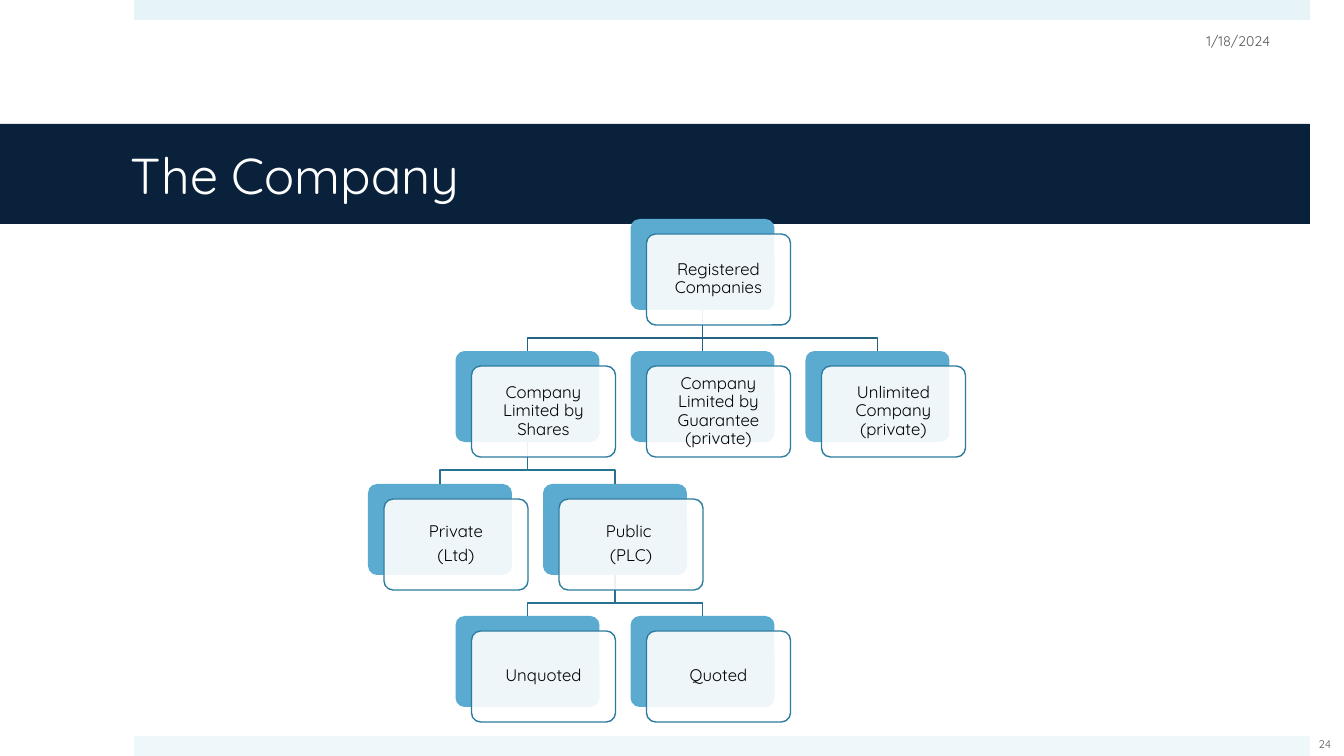
from pptx import Presentation
from pptx.dml.color import RGBColor
from pptx.enum.shapes import MSO_CONNECTOR, MSO_SHAPE
from pptx.enum.text import MSO_ANCHOR, PP_ALIGN
from pptx.oxml.ns import qn
from pptx.util import Pt
from lxml import etree

FONT = "Quicksand"
BANDS = [((134, 0, 1176, 20), "E6F4F8"), ((134, 736, 1176, 20), "EEF8FB")]
TITLE = "The Company"
FOOTERS = [
    ("1/18/2024", (967, 21, 313, 40), 10, PP_ALIGN.RIGHT),
    ("24", (1291, 724, 68, 40), 8, PP_ALIGN.CENTER),
]
COMPANIES = {
    "registered": ("Registered Companies", 3, 0, None),
    "shares": ("Company Limited by Shares", 1, 1, "registered"),
    "guarantee": ("Company Limited by Guarantee (private)", 3, 1, "registered"),
    "unlimited": ("Unlimited Company (private)", 5, 1, "registered"),
    "private": ("Private\n(Ltd)", 0, 2, "shares"),
    "public": ("Public \n(PLC)", 2, 2, "shares"),
    "unquoted": ("Unquoted", 1, 3, "public"),
    "quoted": ("Quoted", 3, 3, "public"),
}
LINE_COLORS = {1: "23637F", 2: "287190", 3: "287190"}
ROW_TOPS = [219, 351, 484, 616]
FIRST_LEFT, COLUMN_PAIR = 368, 175
BOX_WIDTH, BOX_HEIGHT = 144, 91
FRONT_RIGHT, FRONT_DOWN = 16, 15
ELBOW_DROP = 28


def px(value):
    return round(value * 914400 / 100.8)


def color(value):
    return RGBColor.from_string(value)


def add_box(kind, place, fill, line=None):
    shape = slide.shapes.add_shape(kind, *map(px, place))
    shape.shadow.inherit = False
    shape.fill.solid()
    shape.fill.fore_color.rgb = color(fill)
    if line:
        shape.line.color.rgb = color(line)
        shape.line.width = Pt(1)
    else:
        shape.line.fill.background()
    if kind == MSO_SHAPE.ROUNDED_RECTANGLE:
        shape.adjustments[0] = 0.1
    return shape


def write(shape, text, size, hex_color, align, insets=(10, 5, 10, 5)):
    frame = shape.text_frame
    frame.word_wrap = True
    frame.vertical_anchor = MSO_ANCHOR.MIDDLE
    frame.margin_left, frame.margin_top, frame.margin_right, frame.margin_bottom = map(px, insets)
    frame.text = text
    for paragraph in frame.paragraphs:
        paragraph.alignment = align
        for run in paragraph.runs:
            run.font.name = FONT
            run.font.size = Pt(size)
            run.font.color.rgb = color(hex_color)
    return frame


def box_place(column, row):
    return FIRST_LEFT + column * COLUMN_PAIR / 2, ROW_TOPS[row], BOX_WIDTH, BOX_HEIGHT


def link(parent, child, hex_color):
    start_x, start_y = parent.left + parent.width // 2, parent.top + parent.height
    end_x, end_y = child.left + child.width // 2, child.top
    if start_x == end_x:
        line = slide.shapes.add_connector(MSO_CONNECTOR.STRAIGHT, start_x, start_y, end_x, end_y)
        line.begin_connect(parent, 2)
        line.end_connect(child, 0)
        etree.SubElement(line._element.spPr, qn("a:effectLst"))
    else:
        bend_y = start_y + px(ELBOW_DROP)
        builder = slide.shapes.build_freeform(start_x, start_y)
        builder.add_line_segments([(start_x, bend_y), (end_x, bend_y), (end_x, end_y)], close=False)
        line = builder.convert_to_shape()
        line.fill.background()
        line.shadow.inherit = False
    line.line.color.rgb = color(hex_color)
    line.line.width = Pt(1)


presentation = Presentation()
presentation.slide_width, presentation.slide_height = px(1344), px(756)
slide = presentation.slides.add_slide(presentation.slide_layouts[6])

for place, fill in BANDS:
    add_box(MSO_SHAPE.RECTANGLE, place, fill)
title = add_box(MSO_SHAPE.RECTANGLE, (0, 124, 1310, 100), "09213B")
write(title, TITLE, 36, "FFFFFF", PP_ALIGN.LEFT, (131, 5, 30, 5))
for text, place, size, align in FOOTERS:
    write(slide.shapes.add_textbox(*map(px, place)), text, size, "595959", align)

backs = {
    name: add_box(MSO_SHAPE.ROUNDED_RECTANGLE, box_place(column, row), "5AABCF")
    for name, (text, column, row, parent) in COMPANIES.items()
}
for name, (text, column, row, parent) in COMPANIES.items():
    if parent:
        link(backs[parent], backs[name], LINE_COLORS[row])
for text, column, row, parent in COMPANIES.values():
    left, top, width, height = box_place(column, row)
    place = (left + FRONT_RIGHT, top + FRONT_DOWN, width, height)
    front = add_box(MSO_SHAPE.ROUNDED_RECTANGLE, place, "FFFFFF", "2C7C9F")
    fill_color = front._element.spPr.find(qn("a:solidFill"))[0]
    etree.SubElement(fill_color, qn("a:alpha"), val="90000")
    frame = write(front, text, 12, "000000", PP_ALIGN.CENTER, (5, 5, 5, 5))
    for paragraph in frame.paragraphs:
        paragraph.line_spacing = 0.9
        paragraph.space_after = Pt(4.2)

presentation.save("out.pptx")
